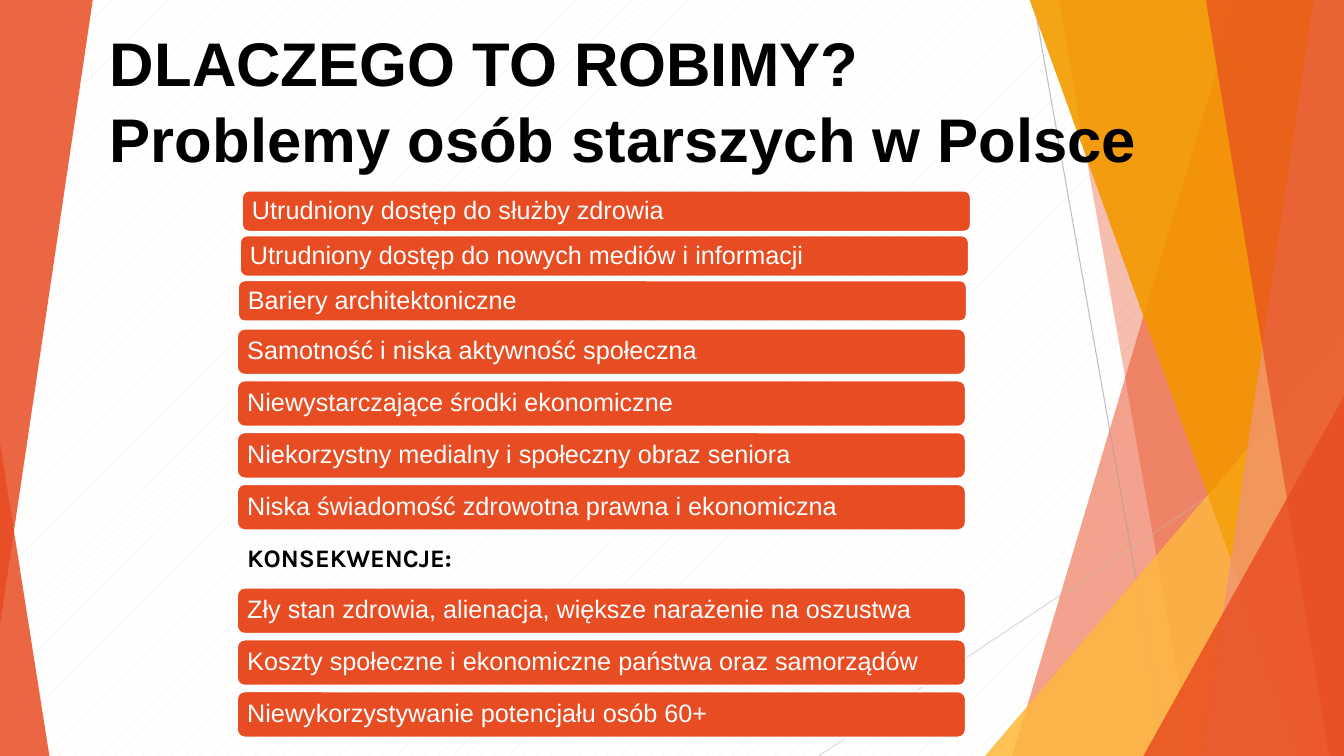
import pptx
import pptx.util
import pptx.dml.color
import pptx.enum.dml
import pptx.enum.shapes
import pptx.enum.text
import pptx.oxml.ns
import lxml.etree

Inches = pptx.util.Inches
Pt = pptx.util.Pt
RGBColor = pptx.dml.color.RGBColor
MSO_SHAPE = pptx.enum.shapes.MSO_SHAPE
MSO_ANCHOR = pptx.enum.text.MSO_ANCHOR
PP_ALIGN = pptx.enum.text.PP_ALIGN

RED = RGBColor(0xE8, 0x4C, 0x22)
SALMON = RGBColor(0xF1, 0x94, 0x7A)
ORANGE = RGBColor(0xF4, 0x9D, 0x00)
YELLOW = RGBColor(0xFF, 0xBD, 0x47)
PEACH = RGBColor(0xFF, 0xE6, 0xD4)
GRAY = RGBColor(0xBF, 0xBF, 0xBF)
LIGHT_GRAY = RGBColor(0xD9, 0xD9, 0xD9)
WHITE = RGBColor(0xFF, 0xFF, 0xFF)
BLACK = RGBColor(0, 0, 0)

TOP, RIGHT, BOTTOM = -0.01, 13.33, 7.5

deck = pptx.Presentation()
deck.slide_width, deck.slide_height = Inches(RIGHT), Inches(BOTTOM)
slide = deck.slides.add_slide(deck.slide_layouts[5])

# Background pattern
background = slide.background.fill
background.patterned()
background.pattern = pptx.enum.dml.MSO_PATTERN.PERCENT_5
background.fore_color.rgb = PEACH
background.back_color.rgb = WHITE


def paint_facet(facet, color, opacity):
    facet.shadow.inherit = False
    facet.line.fill.background()
    facet.fill.solid()
    facet.fill.fore_color.rgb = color
    color_node = facet.fill._xPr.find(".//" + pptx.oxml.ns.qn("a:srgbClr"))
    alpha = lxml.etree.SubElement(color_node, pptx.oxml.ns.qn("a:alpha"))
    alpha.set("val", str(opacity * 1000))


def add_triangle(left, top, width, height, apex, opacity, color=RED):
    triangle = slide.shapes.add_shape(
        MSO_SHAPE.ISOSCELES_TRIANGLE,
        Inches(left), Inches(top), Inches(width), Inches(height))
    triangle.adjustments[0] = apex
    paint_facet(triangle, color, opacity)
    return triangle


# Facets running to the right edge: top x, bottom x, colour, opacity
# None marks the place of the yellow corner triangle
right_facets = [
    (12.28, 10.04, RED, 30),
    (10.5, 11.82, RED, 20),
    None,
    (10.21, 12.91, ORANGE, 70),
    (13.03, 11.92, SALMON, 70),
    (11.96, 13.18, RED, 65),
]
thin_lines = [
    (10.25, 0, 11.58, BOTTOM, GRAY),
    (RIGHT, 4.03, 8.12, BOTTOM, LIGHT_GRAY),
]

# Two stacked layers of facets, with the lower left corner and lines between
for layer in range(2):
    for facet_data in right_facets:
        if facet_data is None:
            add_triangle(9.77, 3.33, 3.56, 4.17, 1, 72, YELLOW)
            continue
        top_x, bottom_x, color, opacity = facet_data
        builder = slide.shapes.build_freeform(Inches(top_x), Inches(TOP))
        builder.add_line_segments(
            [(Inches(x), Inches(y)) for x, y in
             [(RIGHT, TOP), (RIGHT, BOTTOM), (bottom_x, BOTTOM)]])
        paint_facet(builder.convert_to_shape(), color, opacity)
    add_triangle(11.34, 3.93, 1.99, 3.57, 1, 80)

    if layer == 0:
        add_triangle(0, 4.39, 0.49, 3.11, 0, 85)
        for x1, y1, x2, y2, color in thin_lines:
            line = slide.shapes.add_connector(
                pptx.enum.shapes.MSO_CONNECTOR.STRAIGHT,
                Inches(x1), Inches(y1), Inches(x2), Inches(y2))
            line.line.color.rgb = color
            line.line.width = Pt(0.75)
            lxml.etree.SubElement(line._element.spPr,
                                  pptx.oxml.ns.qn("a:effectLst"))

add_triangle(0, 0, 0.92, 6.2, 1, 85).rotation = 180

# Title, brought in front of the facets
title = slide.shapes.title
slide.shapes._spTree.append(title._element)
title.left, title.top = Inches(0.99), Inches(0.13)
title.width, title.height = Inches(11.33), Inches(1.55)
title_frame = title.text_frame
title_frame.text = "DLACZEGO TO ROBIMY?\nProblemy osób starszych w Polsce"
title_frame.auto_size = pptx.enum.text.MSO_AUTO_SIZE.NONE
title_frame.vertical_anchor = MSO_ANCHOR.TOP
title_frame.margin_top = Inches(0.12)
for para in title_frame.paragraphs:
    para.alignment = PP_ALIGN.LEFT
    font = para.runs[0].font
    font.name, font.size, font.bold = "Arial", Pt(44), True
    font.color.rgb = BLACK
title_frame.paragraphs[1].space_before = Pt(1.5)

# Problem and consequence bars
HEADING = "KONSEKWENCJE:"
upper_texts = [
    "Utrudniony dostęp do służby zdrowia",
    "Utrudniony dostęp do nowych mediów i informacji",
    "Bariery architektoniczne",
]
lower_texts = [
    "Samotność i niska aktywność społeczna",
    "Niewystarczające środki ekonomiczne",
    "Niekorzystny medialny i społeczny obraz seniora",
    "Niska świadomość zdrowotna prawna i ekonomiczna",
    HEADING,
    "Zły stan zdrowia, alienacja, większe narażenie na oszustwa",
    "Koszty społeczne i ekonomiczne państwa oraz samorządów",
    "Niewykorzystywanie potencjału osób 60+",
]
bars = [(text, 2.4 - 0.02 * i, 1.89 + 0.445 * i, 0.41)
        for i, text in enumerate(upper_texts)]
bars += [(text, 2.35, 3.26 + 0.514 * i, 0.46)
         for i, text in enumerate(lower_texts)]

for text, left, top, height in bars:
    bar = slide.shapes.add_shape(
        MSO_SHAPE.ROUNDED_RECTANGLE,
        Inches(left), Inches(top), Inches(7.23), Inches(height))
    bar.shadow.inherit = False
    bar.line.color.rgb = WHITE
    bar.line.width = Pt(1.5)
    if text == HEADING:
        bar.fill.background()
    else:
        bar.fill.solid()
        bar.fill.fore_color.rgb = RED
    frame = bar.text_frame
    frame.text = text
    frame.word_wrap = True
    frame.vertical_anchor = MSO_ANCHOR.MIDDLE
    frame.margin_left = frame.margin_right = Inches(0.08)
    frame.margin_top = frame.margin_bottom = Inches(0.05)
    para = frame.paragraphs[0]
    para.alignment = PP_ALIGN.LEFT
    para.line_spacing = 0.9
    font = para.runs[0].font
    font.size = Pt(18)
    font.name = "Karla" if text == HEADING else "Arial"
    font.bold = text == HEADING
    font.color.rgb = BLACK if text == HEADING else WHITE

deck.save("out.pptx")
